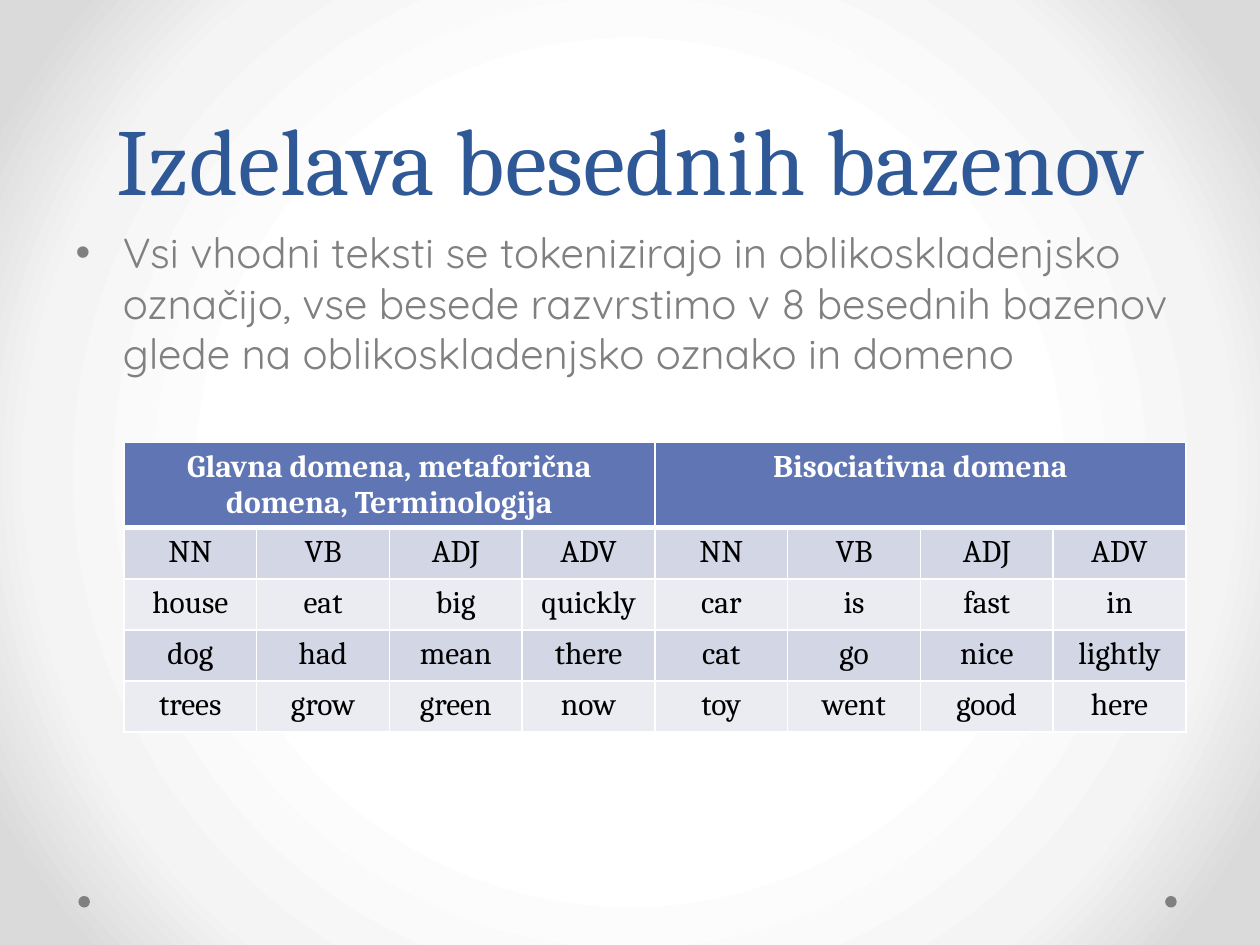
from dataclasses import dataclass

from lxml import etree
from pptx import Presentation
from pptx.dml.color import RGBColor
from pptx.enum.shapes import MSO_SHAPE
from pptx.enum.text import MSO_ANCHOR, MSO_AUTO_SIZE, PP_ALIGN
from pptx.oxml.ns import qn
from pptx.util import Pt

OVAL = MSO_SHAPE.OVAL
BOTTOM = MSO_ANCHOR.BOTTOM
NO_AUTOFIT = MSO_AUTO_SIZE.NONE
CENTER = PP_ALIGN.CENTER


@dataclass(frozen=True)
class Theme:
    """Colours, fonts and type sizes of the slide."""
    heading_font: str = "Cambria"
    body_font: str = "Quicksand"
    title_size: int = 54
    body_size: int = 24
    table_size: int = 18
    title: str = "2F5897"
    grey: str = "808080"
    white: str = "FFFFFF"
    black: str = "000000"
    header: str = "6076B4"
    bands: tuple = ("D2D6E5", "EAECF2")
    background: tuple = ((50, "FFFFFF"), (76, "F4F4F4"), (92, "DADADA"))


THEME = Theme()
DOMAINS = ("Glavna domena, metaforična domena, Terminologija", "Bisociativna domena")
TAGS = ("NN", "VB", "ADJ", "ADV")
WORD_ROWS = (
    TAGS * len(DOMAINS),
    ("house", "eat", "big", "quickly", "car", "is", "fast", "in"),
    ("dog", "had", "mean", "there", "cat", "go", "nice", "lightly"),
    ("trees", "grow", "green", "now", "toy", "went", "good", "here"),
)


def add_element(parent, tag, **attributes):
    """Append a drawing element with the given attributes."""
    element = etree.SubElement(parent, qn(tag))
    for name, value in attributes.items():
        element.set(name, str(value))
    return element


def add_color(parent, color):
    """Append an RGB colour element."""
    add_element(parent, "a:srgbClr", val=color)


def style_runs(paragraph, font_name, size, color, bold=False):
    """Format every run of a paragraph."""
    for run in paragraph.runs:
        run.font.name = font_name
        run.font.size = Pt(size)
        run.font.bold = bold
        run.font.color.rgb = RGBColor.from_string(color)


def place(shape, box):
    """Move and size a shape to a box in points."""
    shape.left, shape.top, shape.width, shape.height = map(Pt, box)


def paint_background(slide):
    """Fill the slide with a gradient spreading from its centre."""
    fill = slide.background.fill
    fill.gradient()
    gradient = slide.background._cSld.find(".//" + qn("a:gradFill"))
    for child in list(gradient):
        gradient.remove(child)
    stops = add_element(gradient, "a:gsLst")
    for percent, color in THEME.background:
        add_color(add_element(stops, "a:gs", pos=percent * 1000), color)
    circle = add_element(gradient, "a:path", path="circle")
    add_element(circle, "a:fillToRect", l=50000, t=50000, r=50000, b=50000)


def add_corner_dots(slide, box):
    """Put a grey dot at each end of the footer box."""
    left, top, width, size = box
    for dot_left in (left, left + width - size):
        dot = slide.shapes.add_shape(OVAL, Pt(dot_left), Pt(top), Pt(size), Pt(size))
        dot.shadow.inherit = False
        dot.fill.solid()
        dot.fill.fore_color.rgb = RGBColor.from_string(THEME.grey)
        dot.line.fill.background()


def fill_title(slide, box, text):
    """Write the title along the bottom of its box."""
    title = slide.shapes.title
    place(title, box)
    frame = title.text_frame
    frame.text = text
    frame.auto_size = NO_AUTOFIT
    frame.vertical_anchor = BOTTOM
    paragraph = frame.paragraphs[0]
    paragraph.alignment = CENTER
    paragraph.line_spacing = Pt(58)
    style_runs(paragraph, THEME.heading_font, THEME.title_size, THEME.title)


def fill_body(slide, box, text):
    """Write the bulleted body text."""
    body = slide.placeholders[1]
    place(body, box)
    frame = body.text_frame
    frame.text = text
    frame.auto_size = NO_AUTOFIT
    paragraph = frame.paragraphs[0]
    style_runs(paragraph, THEME.body_font, THEME.body_size, THEME.grey)
    properties = paragraph._p.get_or_add_pPr()
    properties.set("marL", str(Pt(27)))
    properties.set("indent", str(-Pt(27)))
    before = add_element(properties, "a:spcBef")
    add_element(before, "a:spcPct", val=20000)
    add_element(properties, "a:buFont", typeface="Arial")
    add_element(properties, "a:buChar", char="•")


def style_cell(cell, fill, color, bold=False, top=1, bottom=1):
    """Format a cell's text, borders and fill."""
    paragraph = cell.text_frame.paragraphs[0]
    paragraph.alignment = CENTER
    style_runs(paragraph, THEME.heading_font, THEME.table_size, color, bold)
    properties = cell._tc.get_or_add_tcPr()
    for side, width in (("L", 1), ("R", 1), ("T", top), ("B", bottom)):
        border = add_element(properties, f"a:ln{side}", w=Pt(width))
        add_color(add_element(border, "a:solidFill"), THEME.white)
    cell.fill.solid()
    cell.fill.fore_color.rgb = RGBColor.from_string(fill)


def add_word_table(slide, box, header_height):
    """Add the word pools under one merged heading per domain."""
    row_count, column_count = len(WORD_ROWS) + 1, len(WORD_ROWS[0])
    table = slide.shapes.add_table(row_count, column_count, *map(Pt, box)).table
    row_height = (box[3] - header_height) / len(WORD_ROWS)
    for index, row in enumerate(table.rows):
        row.height = Pt(row_height if index else header_height)

    for index, domain in enumerate(DOMAINS):
        first = index * len(TAGS)
        heading = table.cell(0, first)
        heading.merge(table.cell(0, first + len(TAGS) - 1))
        heading.text_frame.text = domain
    for column in range(column_count):
        style_cell(table.cell(0, column), THEME.header, THEME.white, True, bottom=3)

    for row, words in enumerate(WORD_ROWS, start=1):
        band = THEME.bands[(row - 1) % len(THEME.bands)]
        for column, word in enumerate(words):
            cell = table.cell(row, column)
            cell.text_frame.text = word
            style_cell(cell, band, THEME.black, top=3 if row == 1 else 1)


def main():
    """Build and save the slide."""
    presentation = Presentation()
    presentation.slide_width, presentation.slide_height = Pt(720), Pt(540)
    slide = presentation.slides.add_slide(presentation.slide_layouts[1])
    paint_background(slide)
    add_corner_dots(slide, (44.8, 512, 627.6, 6.6))
    fill_title(slide, (36, 0, 648, 126), "Izdelava besednih bazenov")
    fill_body(
        slide,
        (36, 126, 648, 356.4),
        "Vsi vhodni teksti se tokenizirajo in oblikoskladenjsko označijo, "
        "vse besede razvrstimo v 8 besednih bazenov glede na "
        "oblikoskladenjsko oznako in domeno",
    )
    add_word_table(slide, (70.8, 252.8, 607, 165.2), header_height=48.4)
    presentation.save("out.pptx")


if __name__ == "__main__":
    main()
